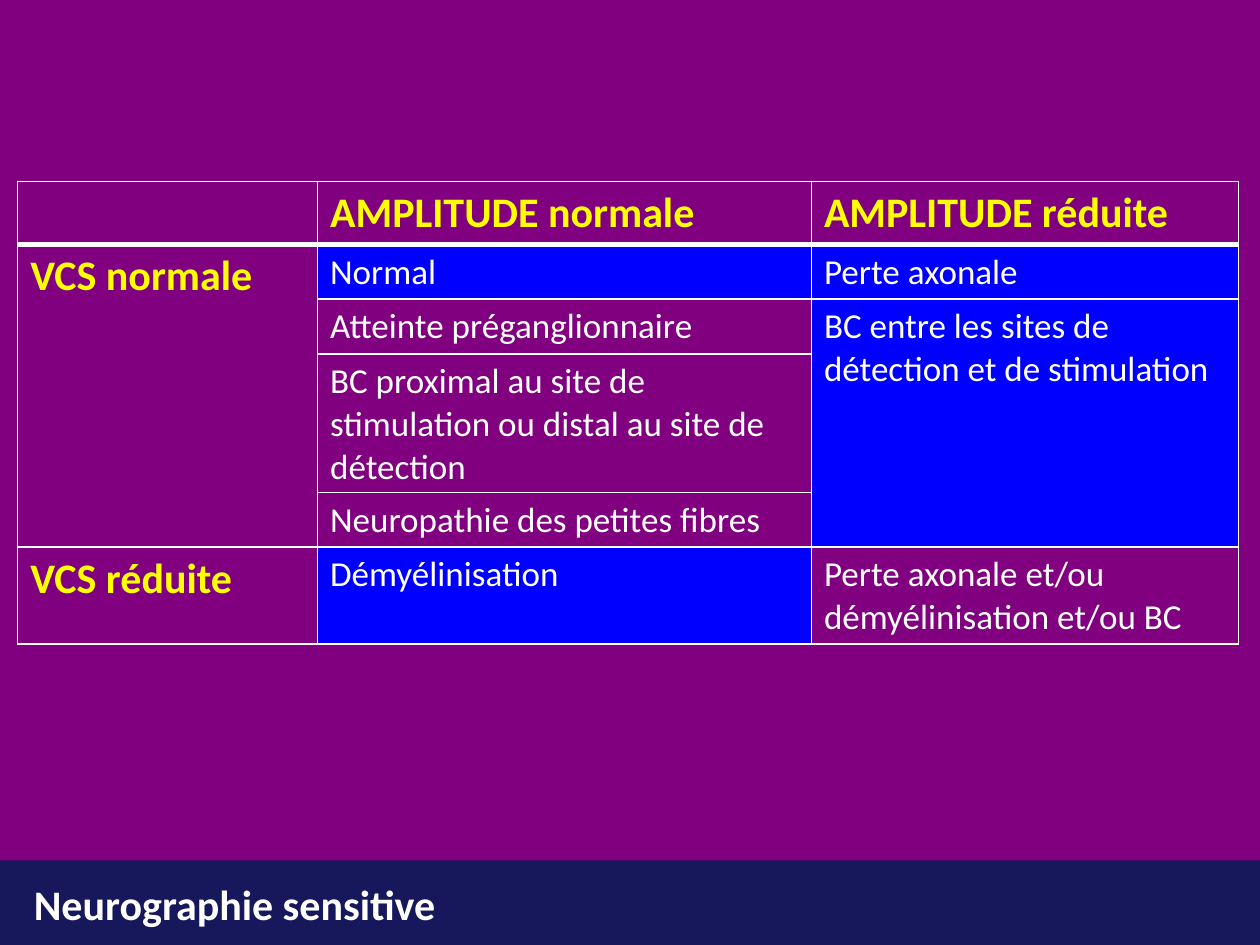
from lxml import etree
from pptx import Presentation
from pptx.dml.color import RGBColor
from pptx.enum.shapes import MSO_SHAPE
from pptx.oxml.ns import qn
from pptx.util import Inches, Pt

RECT = MSO_SHAPE.RECTANGLE

NAVY, PURPLE, BLUE = "17175C", "800080", "0000FF"
WHITE, YELLOW = "FFFFFF", "FFFF00"

# Each entry: row, column, text, fill
HEADS = [
    (0, 1, "AMPLITUDE normale"),
    (0, 2, "AMPLITUDE réduite"),
    (1, 0, "VCS normale"),
    (5, 0, "VCS réduite"),
]
FACTS = [
    (1, 1, "Normal", BLUE),
    (1, 2, "Perte axonale", BLUE),
    (2, 1, "Atteinte préganglionnaire", None),
    (2, 2, "BC entre les sites de détection et de stimulation", BLUE),
    (3, 1, "BC proximal au site de stimulation ou distal au site de détection", None),
    (4, 1, "Neuropathie des petites fibres", None),
    (5, 1, "Démyélinisation", BLUE),
    (5, 2, "Perte axonale et/ou démyélinisation et/ou BC", None),
]
SPANS = [(1, 0, 4, 0), (2, 2, 4, 2)]


def paint(color, hue):
    color.rgb = RGBColor.from_string(hue)


def write(frame, text, size=20, hue=WHITE, bold=False, face="Calibri"):
    run = frame.paragraphs[0].add_run()
    run.text = text
    font = run.font
    font.name, font.size, font.bold = face, Pt(size), bold
    paint(font.color, hue)


def edge(cell, side, width, hue=WHITE):
    line = etree.SubElement(cell._tc.get_or_add_tcPr(), qn("a:ln" + side),
                            w=str(Pt(width)))
    fill = etree.SubElement(line, qn("a:solidFill"))
    etree.SubElement(fill, qn("a:srgbClr"), val=hue)


class Deck:
    """Slide on a grid of 100 columns by 75 rows."""

    unit = 0.1

    def __init__(self):
        self.prs = Presentation()
        self.prs.slide_width = self.grid(100)
        self.prs.slide_height = self.grid(75)
        self.slide = self.prs.slides.add_slide(self.prs.slide_layouts[6])

    def grid(self, *steps):
        sizes = [Inches(step * self.unit) for step in steps]
        return sizes if len(sizes) > 1 else sizes[0]

    def back(self, hue):
        fill = self.slide.background.fill
        fill.solid()
        paint(fill.fore_color, hue)

    def block(self, box, hue):
        shape = self.slide.shapes.add_shape(RECT, *self.grid(*box))
        shape.shadow.inherit = False
        shape.fill.solid()
        paint(shape.fill.fore_color, hue)
        shape.line.fill.background()

    def label(self, box, text, **style):
        frame = self.slide.shapes.add_textbox(*self.grid(*box)).text_frame
        frame.word_wrap = True
        write(frame, text, **style)

    def table(self, left, top, cols, rows):
        box = self.grid(left, top, sum(cols), sum(rows))
        table = self.slide.shapes.add_table(len(rows), len(cols), *box).table
        table.first_row = table.horz_banding = False
        for col, width in zip(table.columns, cols):
            col.width = self.grid(width)
        for row, height in zip(table.rows, rows):
            row.height = self.grid(height)
        # White rules, with a thick one under the heading row
        for r in range(len(rows)):
            for c in range(len(cols)):
                cell = table.cell(r, c)
                edge(cell, "L", 1)
                edge(cell, "R", 1)
                edge(cell, "T", 3 if r == 1 else 1)
                edge(cell, "B", 3 if r == 0 else 1)
                cell.fill.background()
        return table


def main():
    deck = Deck()

    # Background and main panel
    deck.back(NAVY)
    deck.block((0, 0, 100, 68.3), PURPLE)

    # Footer title
    deck.label((1.7, 69.2, 49.2, 5), "Neurographie sensitive", size=24, bold=True)

    # Table of findings
    table = deck.table(1.4, 14.4, (23.8, 39.2, 33.9), (5, 4.3, 4.3, 11, 4.3, 7.7))
    for top, left, low, right in SPANS:
        table.cell(top, left).merge(table.cell(low, right))
    for row, col, text in HEADS:
        write(table.cell(row, col).text_frame, text, size=24, hue=YELLOW, bold=True)
    for row, col, text, hue in FACTS:
        cell = table.cell(row, col)
        write(cell.text_frame, text)
        if hue:
            cell.fill.solid()
            paint(cell.fill.fore_color, hue)

    deck.prs.save("out.pptx")


if __name__ == "__main__":
    main()
